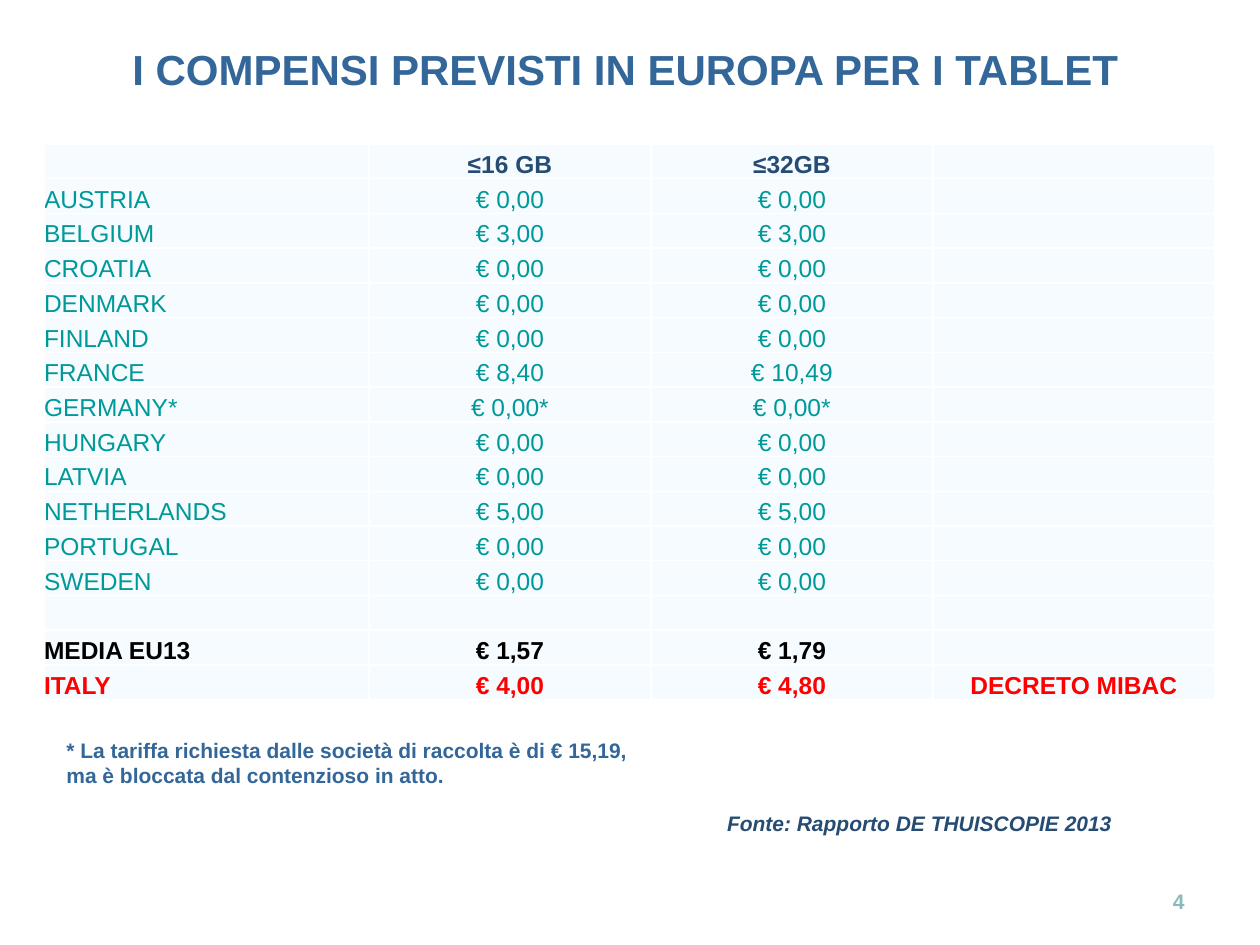
from dataclasses import dataclass, field

import pptx
import pptx.util
import pptx.dml.color
import pptx.enum.text
import pptx.oxml
import pptx.oxml.ns
import pptx.slide
import pptx.table
import pptx.text.text

RGBColor = pptx.dml.color.RGBColor
Align = pptx.enum.text.PP_ALIGN
Anchor = pptx.enum.text.MSO_ANCHOR

PX_PER_INCH = 126
FONT = "Arial"
BLUE = RGBColor(0x33, 0x66, 0x99)
NAVY = RGBColor(0x26, 0x4C, 0x73)
TEAL = RGBColor(0x00, 0x99, 0x99)
BLACK = RGBColor(0x01, 0x00, 0x00)
RED = RGBColor(0xFF, 0x00, 0x00)
PALE_TEAL = RGBColor(0x8C, 0xBA, 0xBA)
PALE_BLUE = RGBColor(0xF6, 0xFB, 0xFF)
WHITE = RGBColor(0xFF, 0xFF, 0xFF)

TABLE_LEFT, TABLE_TOP, TABLE_HEIGHT = 44, 144, 556
COLUMN_WIDTHS = (325, 282, 282, 282)
TABLE_POINTS = 14


@dataclass
class TextBlock:
    text: str
    left: int
    top: int
    width: int
    height: int
    color: RGBColor
    align: Align = Align.LEFT
    anchor: Anchor = Anchor.TOP
    wrap: bool = True
    format: dict = field(default_factory=dict)


@dataclass
class TariffRow:
    label: str = ""
    up_to_16: str = ""
    up_to_32: str = ""
    remark: str = ""
    color: RGBColor = TEAL
    bold: bool = False

    def texts(self) -> tuple[str, ...]:
        return self.label, self.up_to_16, self.up_to_32, self.remark


TITLE = TextBlock("I COMPENSI PREVISTI IN EUROPA PER I TABLET", 15, 37, 1221, 63,
                  BLUE, Align.CENTER, format={"size": pptx.util.Pt(24)})
TEXT_BLOCKS = [
    TextBlock("* La tariffa richiesta dalle società di raccolta è di € 15,19, "
              "ma è bloccata dal contenzioso in atto.", 54, 731, 595, 63, BLUE),
    TextBlock("Fonte: Rapporto DE THUISCOPIE 2013", 709, 804, 421, 38, NAVY,
              Align.CENTER, wrap=False, format={"italic": True}),
    TextBlock("4", 903, 876, 294, 50, PALE_TEAL, Align.RIGHT, Anchor.MIDDLE),
]
TARIFFS = [
    TariffRow("", "≤16 GB", "≤32GB", color=NAVY, bold=True),
    TariffRow("AUSTRIA", "€ 0,00", "€ 0,00"),
    TariffRow("BELGIUM", "€ 3,00", "€ 3,00"),
    TariffRow("CROATIA", "€ 0,00", "€ 0,00"),
    TariffRow("DENMARK", "€ 0,00", "€ 0,00"),
    TariffRow("FINLAND", "€ 0,00", "€ 0,00"),
    TariffRow("FRANCE", "€ 8,40", "€ 10,49"),
    TariffRow("GERMANY*", "€ 0,00*", "€ 0,00*"),
    TariffRow("HUNGARY", "€ 0,00", "€ 0,00"),
    TariffRow("LATVIA", "€ 0,00", "€ 0,00"),
    TariffRow("NETHERLANDS", "€ 5,00", "€ 5,00"),
    TariffRow("PORTUGAL", "€ 0,00", "€ 0,00"),
    TariffRow("SWEDEN", "€ 0,00", "€ 0,00"),
    TariffRow(),
    TariffRow("MEDIA EU13", "€ 1,57", "€ 1,79", color=BLACK, bold=True),
    TariffRow("ITALY", "€ 4,00", "€ 4,80", "DECRETO MIBAC", RED, True),
]


def px(length: float) -> int:
    return round(length * pptx.util.Inches(1) / PX_PER_INCH)


def write_text(para: pptx.text.text._Paragraph, text: str, color: RGBColor,
               format_values: dict) -> None:
    span = para.add_run()
    span.text = text
    for name, value in format_values.items():
        setattr(span.font, name, value)
    span.font.color.rgb = color


def fill_text_shape(box, block: TextBlock) -> None:
    box.left, box.top = px(block.left), px(block.top)
    box.width, box.height = px(block.width), px(block.height)
    frame = box.text_frame
    frame.auto_size = pptx.enum.text.MSO_AUTO_SIZE.NONE
    frame.word_wrap = block.wrap
    frame.vertical_anchor = block.anchor
    para = frame.paragraphs[0]
    para.alignment = block.align
    base = {"name": FONT, "size": pptx.util.Pt(12), "bold": True}
    write_text(para, block.text, block.color, base | block.format)


def add_borders(cell: pptx.table._Cell) -> None:
    properties = cell._tc.get_or_add_tcPr()
    for side in ("lnL", "lnR", "lnT", "lnB"):
        properties.append(pptx.oxml.parse_xml(
            f'<a:{side} {pptx.oxml.ns.nsdecls("a")} w="{pptx.util.Pt(1)}"><a:solidFill>'
            f'<a:srgbClr val="{WHITE}"/></a:solidFill></a:{side}>'))


def fill_cell(cell: pptx.table._Cell, text: str, align: Align, row: TariffRow) -> None:
    for side in ("left", "right", "top", "bottom"):
        setattr(cell, f"margin_{side}", 0)
    cell.vertical_anchor = Anchor.BOTTOM
    add_borders(cell)
    cell.fill.solid()
    cell.fill.fore_color.rgb = PALE_BLUE
    para = cell.text_frame.paragraphs[0]
    para.alignment = align
    if text:
        write_text(para, text, row.color, {
            "name": FONT, "size": pptx.util.Pt(TABLE_POINTS), "bold": row.bold})
    else:
        # An empty cell would otherwise stretch its row to fit 18 pt text.
        para._p.get_or_add_endParaRPr().set("sz", str(TABLE_POINTS * 100))


def add_tariff_table(slide: pptx.slide.Slide) -> None:
    table = slide.shapes.add_table(
        len(TARIFFS), len(COLUMN_WIDTHS), px(TABLE_LEFT), px(TABLE_TOP),
        px(sum(COLUMN_WIDTHS)), px(TABLE_HEIGHT)).table
    table.first_row = table.horz_banding = False
    for column, width in zip(table.columns, COLUMN_WIDTHS):
        column.width = px(width)
    for table_row, tariff in zip(table.rows, TARIFFS):
        table_row.height = px(TABLE_HEIGHT / len(TARIFFS))
        for index, (cell, text) in enumerate(zip(table_row.cells, tariff.texts())):
            fill_cell(cell, text, Align.CENTER if index else Align.LEFT, tariff)


def main() -> None:
    deck = pptx.Presentation()
    deck.slide_width = pptx.util.Inches(10)
    deck.slide_height = pptx.util.Inches(7.5)
    slide = deck.slides.add_slide(deck.slide_layouts.get_by_name("Title Only"))
    fill_text_shape(slide.shapes.title, TITLE)
    add_tariff_table(slide)
    for block in TEXT_BLOCKS:
        fill_text_shape(slide.shapes.add_textbox(0, 0, 0, 0), block)
    deck.save("out.pptx")


if __name__ == "__main__":
    main()
